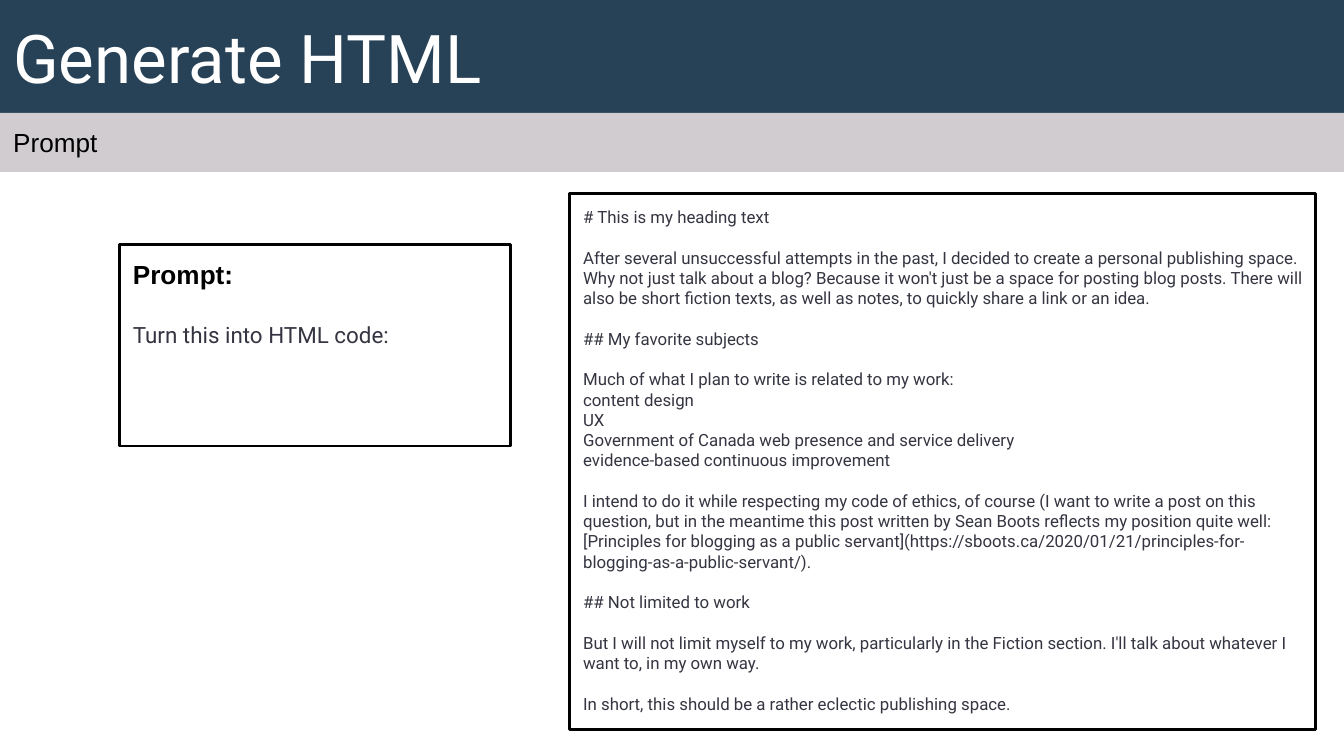
from pptx import Presentation
from pptx import util as u
from pptx.dml.color import RGBColor
from pptx.enum import shapes, text

NAVY = RGBColor(0x27, 0x41, 0x56)
GREY = RGBColor(0xD0, 0xCC, 0xD0)
INK = RGBColor(0x34, 0x35, 0x41)
BLACK = RGBColor(0, 0, 0)
WHITE = RGBColor(255, 255, 255)

# Text formats
TITLE = {"name": "Roboto", "size": u.Pt(36), "color": WHITE}
LABEL = {"name": "Arial", "size": u.Pt(14), "color": BLACK}
HEADING = {**LABEL, "bold": True}
BODY = {"name": "Roboto", "size": u.Pt(12), "color": INK}
SMALL = {**BODY, "size": u.Pt(9)}

# Each block is a group of lines; blocks are set apart by paragraph spacing
ARTICLE = [
    ["# This is my heading text"],
    ["After several unsuccessful attempts in the past, I decided to create a personal "
     "publishing space. Why not just talk about a blog? Because it won't just be a space "
     "for posting blog posts. There will also be short fiction texts, as well as notes, "
     "to quickly share a link or an idea."],
    ["## My favorite subjects"],
    ["Much of what I plan to write is related to my work:",
     "content design",
     "UX",
     "Government of Canada web presence and service delivery",
     "evidence-based continuous improvement"],
    ["I intend to do it while respecting my code of ethics, of course (I want to write a "
     "post on this question, but in the meantime this post written by Sean Boots reflects "
     "my position quite well: [Principles for blogging as a public servant]"
     "(https://sboots.ca/2020/01/21/principles-for-blogging-as-a-public-servant/)."],
    ["## Not limited to work"],
    ["But I will not limit myself to my work, particularly in the Fiction section. "
     "I'll talk about whatever I want to, in my own way."],
    ["In short, this should be a rather eclectic publishing space."],
]


class SlideBuilder:
    """Draws on one 16:9 slide, with lengths in grid cells of a tenth of an inch."""
    CELL = u.Inches(0.1)
    COLUMNS = 100
    ROWS = COLUMNS * 9 / 16

    def __init__(self, deck):
        deck.slide_width = int(self.COLUMNS * self.CELL)
        deck.slide_height = int(self.ROWS * self.CELL)
        self.slide = deck.slides.add_slide(deck.slide_layouts[6])

    def _rectangle(self, column, row, columns, rows, anchor):
        place = [int(n * self.CELL) for n in (column, row, columns, rows)]
        box = self.slide.shapes.add_shape(shapes.MSO_SHAPE.RECTANGLE, *place)
        box.shadow.inherit = False
        frame = {"word_wrap": True, "vertical_anchor": anchor}
        frame.update({f"margin_{side}": self.CELL
                      for side in ("left", "right", "top", "bottom")})
        for key, value in frame.items():
            setattr(box.text_frame, key, value)
        return box

    def _write(self, box, blocks, gap=0):
        """Fill a box with blocks of (lines, format), gap points apart."""
        paragraph = None
        for lines, style in blocks:
            for number, line in enumerate(lines):
                first = paragraph is None
                paragraph = (box.text_frame.paragraphs[0] if first
                             else box.text_frame.add_paragraph())
                paragraph.alignment = text.PP_ALIGN.LEFT
                if number == 0 and not first:
                    paragraph.space_before = u.Pt(gap)
                run = paragraph.add_run()
                run.text = line
                for key, value in style.items():
                    if key == "color":
                        run.font.color.rgb = value
                    else:
                        setattr(run.font, key, value)

    def band(self, row, rows, fill, words, style, anchor=text.MSO_ANCHOR.TOP):
        bar = self._rectangle(0, row, self.COLUMNS, rows, anchor)
        bar.fill.solid()
        bar.fill.fore_color.rgb = fill
        bar.line.fill.background()
        self._write(bar, [([words], style)])

    def panel(self, column, row, columns, rows, blocks, gap):
        frame = self._rectangle(column, row, columns, rows, text.MSO_ANCHOR.TOP)
        frame.fill.background()
        frame.line.color.rgb = BLACK
        frame.line.width = u.Pt(1.5)
        self._write(frame, blocks, gap)


def main():
    deck = Presentation()
    page = SlideBuilder(deck)

    # Title and subtitle bands
    page.band(0, 8.4, NAVY, "Generate HTML", TITLE, text.MSO_ANCHOR.MIDDLE)
    page.band(8.4, 4.4, GREY, "Prompt", LABEL)

    # Prompt on the left
    page.panel(8.9, 18.2, 29.1, 15,
               [(["Prompt:"], HEADING), (["Turn this into HTML code:"], BODY)], gap=17)

    # Source text on the right
    page.panel(42.4, 14.4, 55.5, 39.9,
               [(lines, SMALL) for lines in ARTICLE], gap=10.9)

    deck.save("out.pptx")


if __name__ == "__main__":
    main()
